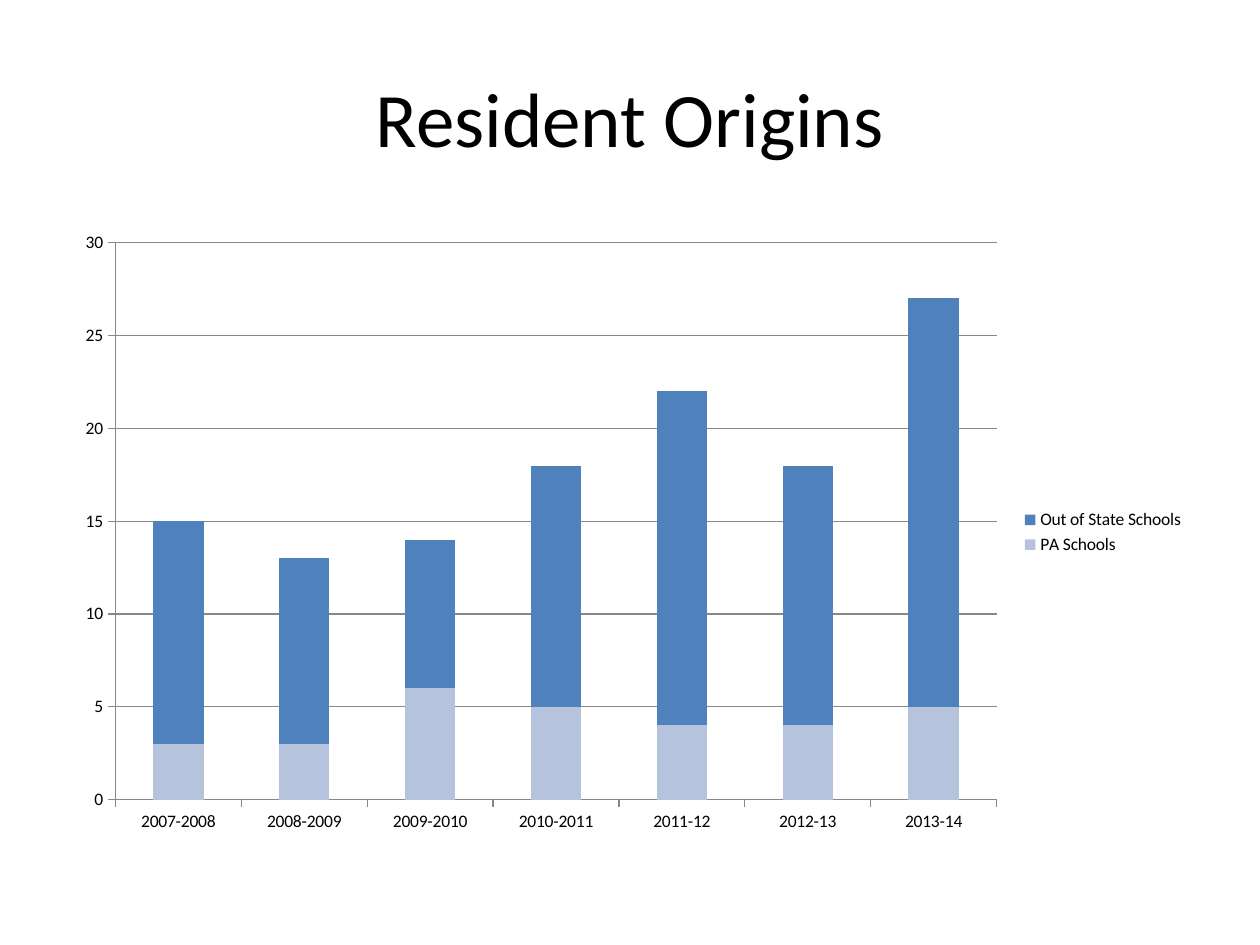
from pptx import Presentation
from pptx import util as u
from pptx.chart.data import CategoryChartData
from pptx.dml.color import RGBColor
from pptx.enum import chart as ch, text

FONT = "Calibri"
BLACK, AXIS_GREY = "000000", "878787"
YEARS = ["2007-2008", "2008-2009", "2009-2010", "2010-2011",
         "2011-12", "2012-13", "2013-14"]
# School group: (residents per year, bar colour)
SCHOOLS = {
    "PA Schools": ([3, 3, 6, 5, 4, 4, 5], "B5C3DC"),
    "Out of State Schools": ([12, 10, 8, 13, 18, 14, 22], "4F81BD"),
}


def color(value):
    return RGBColor.from_string(value)


def style_font(font, size, fill=BLACK):
    font.name, font.size = FONT, u.Pt(size)
    font.color.rgb = color(fill)


def style_line(line, fill=AXIS_GREY, width=0.75):
    line.color.rgb = color(fill)
    line.width = u.Pt(width)


def add_text(slide, box, words, size=18, fill=BLACK,
             align=text.PP_ALIGN.CENTER, anchor=text.MSO_ANCHOR.MIDDLE):
    frame = slide.shapes.add_textbox(*map(u.Inches, box)).text_frame
    frame.word_wrap = True
    frame.vertical_anchor = anchor
    paragraph = frame.paragraphs[0]
    paragraph.alignment = align
    run = paragraph.add_run()
    run.text = words
    style_font(run.font, size, fill)


def add_origins_chart(slide, box):
    origins = CategoryChartData()
    origins.categories = YEARS
    for school, (residents, _) in SCHOOLS.items():
        origins.add_series(school, residents)
    chart = slide.shapes.add_chart(
        ch.XL_CHART_TYPE.COLUMN_STACKED, *map(u.Inches, box), origins).chart
    chart.has_title = False
    style_font(chart.font, 10)

    # Stacked bars
    bars = chart.plots[0]
    bars.gap_width, bars.overlap = 150, 100
    bars.vary_by_categories = False
    for series, (_, fill) in zip(bars.series, SCHOOLS.values()):
        series.format.fill.solid()
        series.format.fill.fore_color.rgb = color(fill)

    # Axes and gridlines
    for axis in (chart.category_axis, chart.value_axis):
        axis.major_tick_mark = ch.XL_TICK_MARK.OUTSIDE
        axis.minor_tick_mark = ch.XL_TICK_MARK.NONE
        style_line(axis.format.line)
    residents_axis = chart.value_axis
    residents_axis.minimum_scale, residents_axis.maximum_scale = 0, 30
    residents_axis.major_unit = 5
    residents_axis.has_major_gridlines = True
    style_line(residents_axis.major_gridlines.format.line)

    # Legend
    chart.has_legend = True
    chart.legend.position = ch.XL_LEGEND_POSITION.RIGHT
    chart.legend.include_in_layout = False


def main():
    deck = Presentation()
    deck.slide_width, deck.slide_height = u.Inches(10), u.Inches(7.5)
    slide = deck.slides.add_slide(deck.slide_layouts[6])
    add_text(slide, (0.5, 0.3, 9, 1.25), "Resident Origins", size=44)
    add_origins_chart(slide, (0.5, 1.75, 9, 4.95))
    deck.save("out.pptx")


if __name__ == "__main__":
    main()
